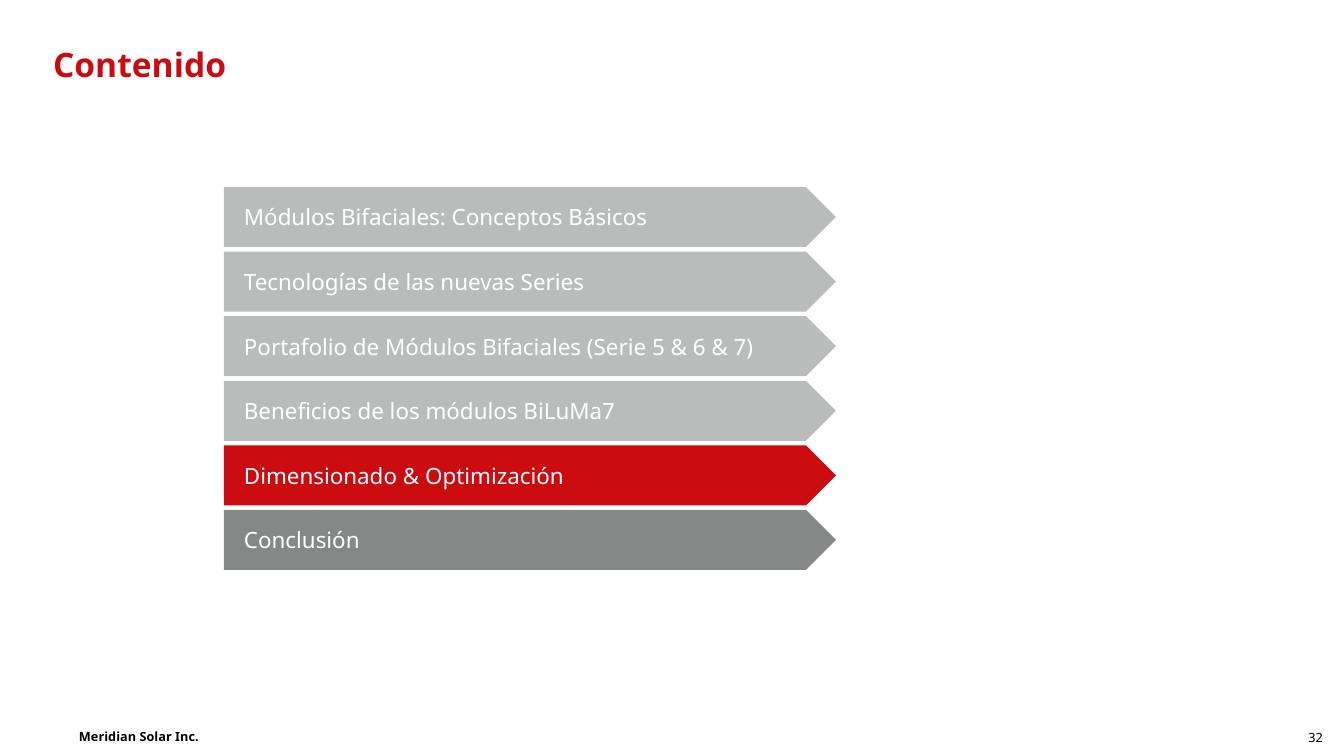
import dataclasses

import pptx
import pptx.dml.color
import pptx.enum.shapes
import pptx.enum.text
import pptx.util

TITLE = "Contenido"
COMPANY = "Meridian Solar Inc."
PAGE = "32"
# (section, state)
SECTIONS = [
    ("Módulos Bifaciales: Conceptos Básicos", "done"),
    ("Tecnologías de las nuevas Series", "done"),
    ("Portafolio de Módulos Bifaciales (Serie 5 & 6 & 7)", "done"),
    ("Beneficios de los módulos BiLuMa7", "done"),
    ("Dimensionado & Optimización", "current"),
    ("Conclusión", "next"),
]


@dataclasses.dataclass(frozen=True)
class Theme:
    font: str = "Noto Sans"
    red: str = "CA0B0F"
    light_gray: str = "BABCBB"
    dark_gray: str = "868887"
    white: str = "FFFFFF"
    black: str = "000000"
    title_size: float = 18
    section_size: float = 12
    footer_size: float = 6.8


THEME = Theme()
STATE_FILL = {"done": THEME.light_gray, "current": THEME.red, "next": THEME.dark_gray}

SLIDE_W, SLIDE_H = 1344, 756
EMU_PER_PX = 914400 / 134.4
BAR_LEFT, BAR_W, BAR_H, BAR_INSET = 224, 612, 60, 20
FIRST_TOP, LAST_TOP = 187, 510

ALIGN = pptx.enum.text.PP_ALIGN
ANCHOR = pptx.enum.text.MSO_ANCHOR


def px(n):
    return pptx.util.Emu(round(n * EMU_PER_PX))


def rgb(value):
    return pptx.dml.color.RGBColor.from_string(value)


def write(sp, text, size, color, bold=False, align=ALIGN.LEFT,
          anchor=ANCHOR.MIDDLE, inset=0, wrap=True):
    tf = sp.text_frame
    tf.text = text
    tf.word_wrap = wrap
    tf.vertical_anchor = anchor
    tf.margin_left = tf.margin_right = px(inset)
    tf.margin_top = tf.margin_bottom = 0
    p = tf.paragraphs[0]
    p.alignment = align
    font = p.runs[0].font
    font.name, font.size, font.bold = THEME.font, pptx.util.Pt(size), bold
    font.color.rgb = rgb(color)


def add_text(s, box, *args, **kwargs):
    write(s.shapes.add_textbox(*map(px, box)), *args, **kwargs)


def add_section(s, top, text, state):
    sp = s.shapes.add_shape(pptx.enum.shapes.MSO_SHAPE.PENTAGON,
                            *map(px, (BAR_LEFT, top, BAR_W, BAR_H)))
    sp.adjustments[0] = 0.5
    sp.shadow.inherit = False
    sp.fill.solid()
    sp.fill.fore_color.rgb = rgb(STATE_FILL[state])
    sp.line.fill.background()
    write(sp, text, THEME.section_size, THEME.white, inset=BAR_INSET)


def main():
    prs = pptx.Presentation()
    prs.slide_width, prs.slide_height = px(SLIDE_W), px(SLIDE_H)
    s = prs.slides.add_slide(prs.slide_layouts[6])

    add_text(s, (1286, 723, 37, 28), PAGE, THEME.footer_size, THEME.black,
             align=ALIGN.RIGHT, wrap=False)
    add_text(s, (79, 723, 180, 26), COMPANY, THEME.footer_size, THEME.black,
             bold=True, wrap=False)
    add_text(s, (53, 44, 876, 95), TITLE, THEME.title_size, THEME.red,
             bold=True, anchor=ANCHOR.TOP)

    pitch = (LAST_TOP - FIRST_TOP) / (len(SECTIONS) - 1)
    for i, (text, state) in enumerate(SECTIONS):
        add_section(s, FIRST_TOP + i * pitch, text, state)

    prs.save("out.pptx")


if __name__ == "__main__":
    main()
